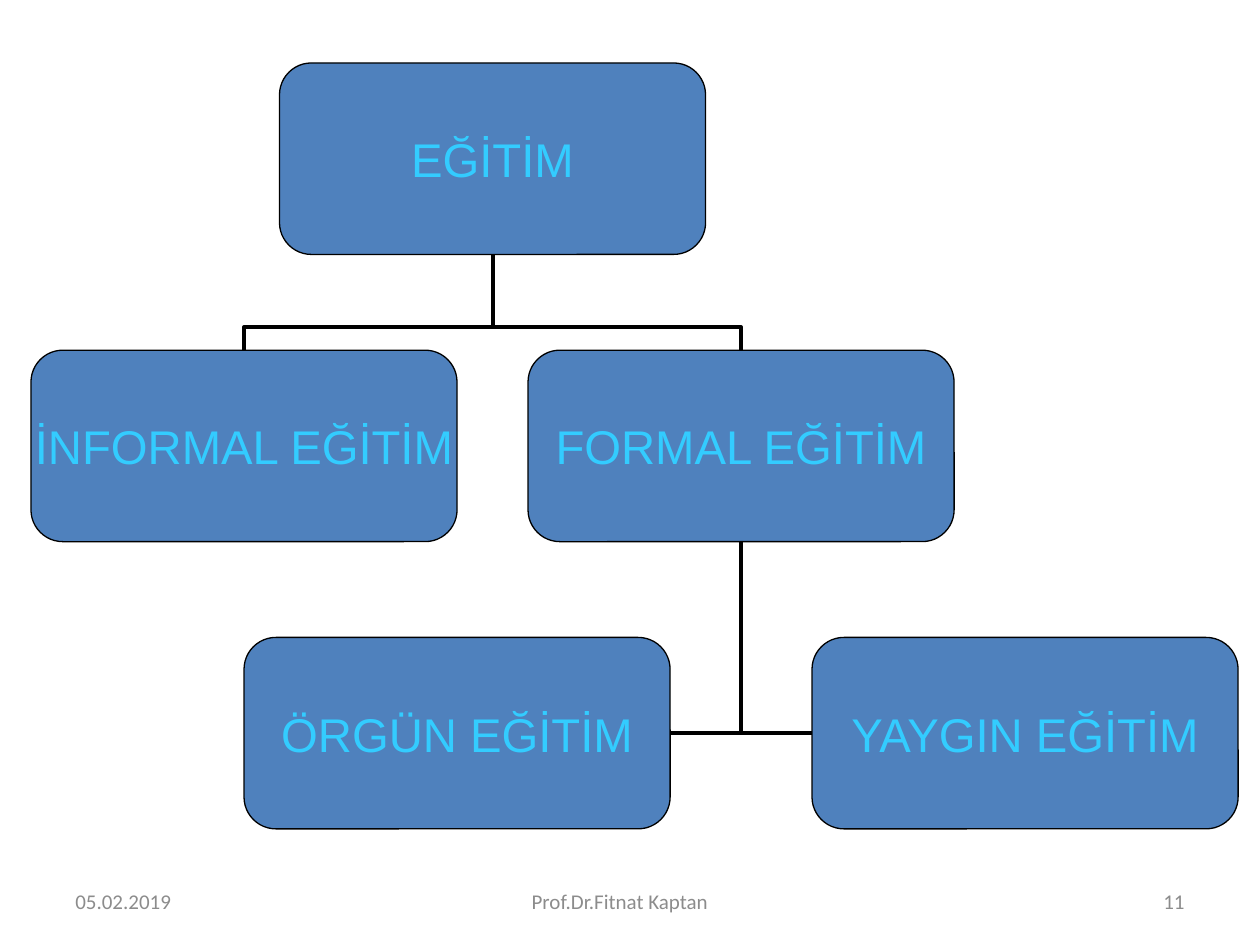
from pptx import Presentation
from pptx.dml.color import RGBColor
from pptx.enum.shapes import MSO_CONNECTOR, MSO_SHAPE
from pptx.enum.text import MSO_ANCHOR, PP_ALIGN
from pptx.oxml.ns import qn
from pptx.util import Cm, Pt
from lxml.etree import SubElement

COLOURS = {"box": "4F81BD", "line": "000000", "label": "33CCFF", "footer": "8C8C8C"}
BOX_WIDTH, BOX_HEIGHT, LEVEL_STEP = 8.59, 3.86, 5.79
SIDE_INSET = 0.25


def colour(name):
    return RGBColor.from_string(COLOURS[name])


def write_text(shape, text, *, font, size, ink, align, wrap=True, insets=(0, 0)):
    """Fill a shape with one vertically centred paragraph; insets are left and right in cm."""
    frame = shape.text_frame
    frame.word_wrap = wrap
    frame.vertical_anchor = MSO_ANCHOR.MIDDLE
    frame.margin_left, frame.margin_right = (Cm(inset) for inset in insets)
    frame.margin_top = frame.margin_bottom = 0
    para = frame.paragraphs[0]
    para.alignment = align
    span = para.add_run()
    span.text = text
    span.font.name = font
    span.font.size = Pt(size)
    span.font.color.rgb = colour(ink)


def add_node(page, text, centre, top):
    box = page.shapes.add_shape(
        MSO_SHAPE.ROUNDED_RECTANGLE,
        Cm(centre - BOX_WIDTH / 2), Cm(top), Cm(BOX_WIDTH), Cm(BOX_HEIGHT))
    box.shadow.inherit = False
    box.fill.solid()
    box.fill.fore_color.rgb = colour("box")
    box.line.color.rgb = colour("line")
    box.line.width = Pt(0.75)
    write_text(box, text, font="Arial", size=27, ink="label",
               align=PP_ALIGN.CENTER, wrap=False)


def add_elbow(page, start, end):
    elbow = page.shapes.add_connector(
        MSO_CONNECTOR.ELBOW, *(Cm(value) for value in (*start, *end)))
    elbow.line.color.rgb = colour("line")
    elbow.line.width = Pt(2.25)
    properties = elbow._element.spPr
    SubElement(properties, qn("a:effectLst"))
    return properties


def link_from_top(page, child, parent, bend=0.243):
    """Run up from a child's top and across to the parent's bottom: a quarter-turned elbow."""
    (child_x, child_y), (parent_x, parent_y) = child, parent
    middle_x, middle_y = (child_x + parent_x) / 2, (child_y + parent_y) / 2
    half_run = (child_y - parent_y) / 2
    half_span = abs(child_x - parent_x) / 2
    side = 1 if child_x > parent_x else -1
    properties = add_elbow(
        page,
        (middle_x + side * half_run, middle_y - half_span),
        (middle_x - side * half_run, middle_y + half_span))
    turn = 90 if side > 0 else 270
    properties.find(qn("a:xfrm")).set("rot", str(turn * 60000))
    adjustments = properties.find(qn("a:prstGeom")).find(qn("a:avLst"))
    SubElement(adjustments, qn("a:gd"), name="adj1", fmla=f"val {round(bend * 100000)}")


def link_from_side(page, child, parent):
    """Run sideways from a child's inner edge, then up to the parent's bottom."""
    properties = add_elbow(page, child, parent)
    properties.find(qn("a:prstGeom")).set("prst", "bentConnector2")


def add_tree(page, centre, top):
    tops = [top + level * LEVEL_STEP for level in range(3)]
    branch_offset = (BOX_WIDTH + 1.43) / 2
    leaf_offset = (BOX_WIDTH + 2.86) / 2
    formal = centre + branch_offset

    for side in (1, -1):
        inner_edge = formal + side * (leaf_offset - BOX_WIDTH / 2)
        link_from_side(page, (inner_edge, tops[2] + BOX_HEIGHT / 2),
                       (formal, tops[1] + BOX_HEIGHT))
    for side in (1, -1):
        link_from_top(page, (centre + side * branch_offset, tops[1]),
                      (centre, tops[0] + BOX_HEIGHT))

    for text, node_centre, level in (
        ("EĞİTİM", centre, 0),
        ("İNFORMAL EĞİTİM", centre - branch_offset, 1),
        ("FORMAL EĞİTİM", formal, 1),
        ("ÖRGÜN EĞİTİM", formal - leaf_offset, 2),
        ("YAYGIN EĞİTİM", formal + leaf_offset, 2),
    ):
        add_node(page, text, node_centre, tops[level])


def add_footer(page, left, top, width, height):
    side_width, middle_width = 5.93, 8.04
    for text, offset, part_width, align, right_inset in (
        ("05.02.2019", 0, side_width, PP_ALIGN.LEFT, SIDE_INSET),
        ("Prof.Dr.Fitnat Kaptan", (width - middle_width) / 2, middle_width,
         PP_ALIGN.CENTER, 0.66),
        ("11", width - side_width, side_width, PP_ALIGN.RIGHT, SIDE_INSET),
    ):
        box = page.shapes.add_textbox(
            Cm(left + offset), Cm(top), Cm(part_width), Cm(height))
        write_text(box, text, font="Calibri", size=12, ink="footer",
                   align=align, insets=(SIDE_INSET, right_inset))


def main():
    deck = Presentation()
    deck.slide_width, deck.slide_height = Cm(25.4), Cm(19.05)
    page = deck.slides.add_slide(deck.slide_layouts[6])
    add_tree(page, centre=9.93, top=1.27)
    add_footer(page, left=1.27, top=17.65, width=22.86, height=1.02)
    deck.save("out.pptx")


if __name__ == "__main__":
    main()
